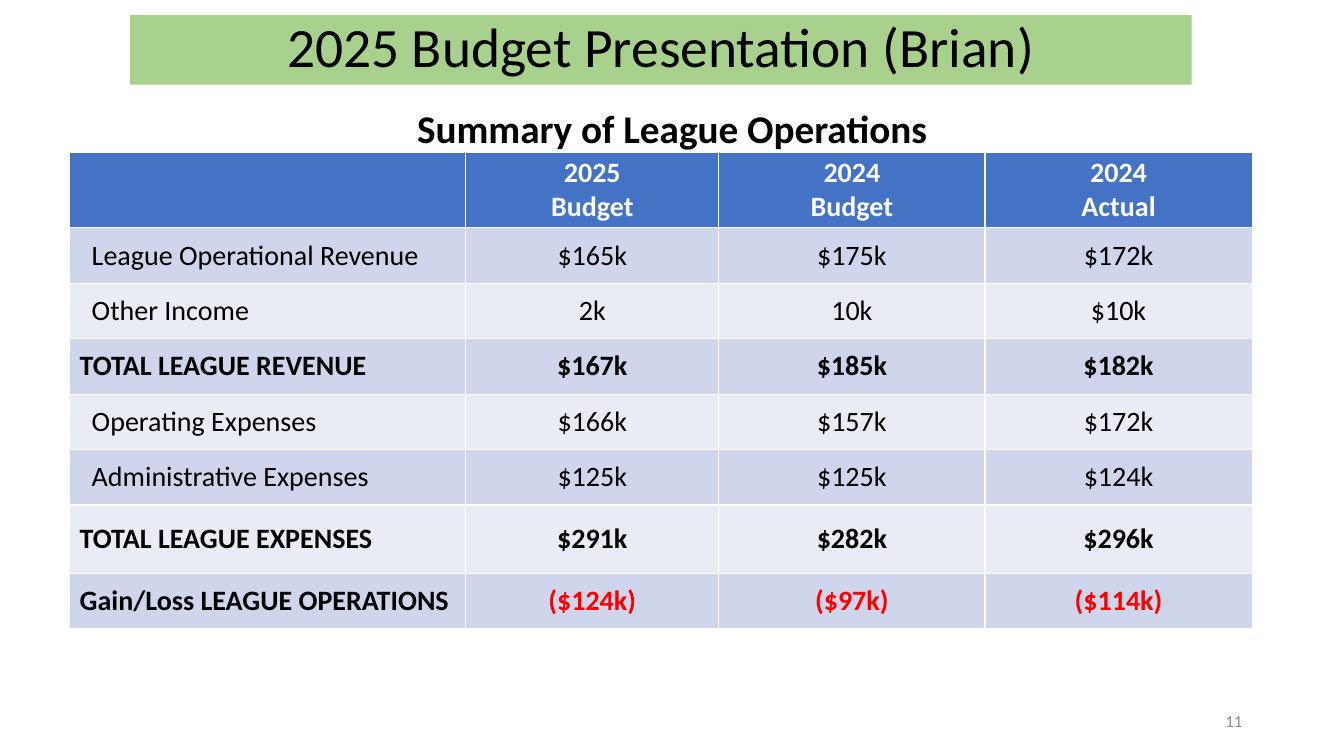
from pptx import Presentation
from pptx.dml.color import RGBColor
from pptx.enum.shapes import MSO_SHAPE
from pptx.enum.text import MSO_ANCHOR, PP_ALIGN
from pptx.util import Inches, Pt

RECT = MSO_SHAPE.RECTANGLE
TOP, MIDDLE = MSO_ANCHOR.TOP, MSO_ANCHOR.MIDDLE
LEFT, CENTER, RIGHT = PP_ALIGN.LEFT, PP_ALIGN.CENTER, PP_ALIGN.RIGHT

FONT = "Calibri"
BLACK = RGBColor(0x00, 0x00, 0x00)
WHITE = RGBColor(0xFF, 0xFF, 0xFF)
GRAY = RGBColor(0x8C, 0x8C, 0x8C)
RED = RGBColor(0xFF, 0x00, 0x00)
GREEN = RGBColor(0xA9, 0xD1, 0x8E)
BLUE = RGBColor(0x44, 0x72, 0xC4)
BANDS = (RGBColor(0xE9, 0xEB, 0xF5), RGBColor(0xCF, 0xD5, 0xEA))

WIDTHS = (3.93, 2.51, 2.64, 2.65)
HEIGHTS = (0.75, 0.55, 0.55, 0.55, 0.55, 0.55, 0.68, 0.55)
BUDGET = (
    ("", "2025\vBudget", "2024\vBudget", "2024\vActual"),
    ("League Operational Revenue", "$165k", "$175k", "$172k"),
    ("Other Income", "2k", "10k", "$10k"),
    ("TOTAL LEAGUE REVENUE", "$167k", "$185k", "$182k"),
    ("Operating Expenses", "$166k", "$157k", "$172k"),
    ("Administrative Expenses", "$125k", "$125k", "$124k"),
    ("TOTAL LEAGUE EXPENSES", "$291k", "$282k", "$296k"),
    ("Gain/Loss LEAGUE OPERATIONS", "($124k)", "($97k)", "($114k)"),
)
BOLD_ROWS = (0, 3, 6, 7)


def set_text(frame, text, size, color, align, bold=False):
    frame.text = text
    line = frame.paragraphs[0]
    line.alignment = align
    for run in line.runs:
        run.font.name = FONT
        run.font.size = Pt(size)
        run.font.bold = bold
        run.font.color.rgb = color


def add_title(slide, text):
    bar = slide.shapes.add_shape(
        RECT, Inches(1.29), Inches(0.15), Inches(10.53), Inches(0.69))
    bar.shadow.inherit = False
    bar.fill.solid()
    bar.fill.fore_color.rgb = GREEN
    bar.line.fill.background()
    frame = bar.text_frame
    frame.vertical_anchor = MIDDLE
    set_text(frame, text, 39.6, BLACK, CENTER)
    frame.paragraphs[0].line_spacing = 0.9


def add_label(slide, box, text, size, color, align, anchor, bold=False):
    label = slide.shapes.add_textbox(*map(Inches, box))
    frame = label.text_frame
    frame.word_wrap = True
    frame.vertical_anchor = anchor
    set_text(frame, text, size, color, align, bold)


def fill_cell(cell, text, row, col):
    cell.fill.solid()
    cell.fill.fore_color.rgb = BANDS[row % 2] if row else BLUE
    cell.vertical_anchor = MIDDLE
    cell.margin_top = cell.margin_bottom = Inches(0.03)
    bold = row in BOLD_ROWS
    if col == 0 and not bold:
        cell.margin_left = Inches(0.22)
    color = BLACK if row else WHITE
    if col and text.startswith("("):
        color = RED
    set_text(cell.text_frame, text, 20, color, CENTER if col else LEFT, bold)


def add_budget(slide):
    table = slide.shapes.add_table(
        len(HEIGHTS), len(WIDTHS), Inches(0.69), Inches(1.51),
        Inches(sum(WIDTHS)), Inches(sum(HEIGHTS))).table
    for col, width in enumerate(WIDTHS):
        table.columns[col].width = Inches(width)
    for row, height in enumerate(HEIGHTS):
        table.rows[row].height = Inches(height)
        for col, text in enumerate(BUDGET[row]):
            fill_cell(table.cell(row, col), text, row, col)


def main():
    deck = Presentation()
    deck.slide_width = Inches(13.33)
    deck.slide_height = Inches(7.5)
    slide = deck.slides.add_slide(deck.slide_layouts[6])
    add_title(slide, "2025 Budget Presentation (Brian)")
    add_label(slide, (0.92, 0.99, 11.49, 0.57), "Summary of League Operations",
              28, BLACK, CENTER, TOP, True)
    add_label(slide, (9.42, 6.95, 3, 0.4), "11", 12, GRAY, RIGHT, MIDDLE)
    add_budget(slide)
    deck.save("out.pptx")


if __name__ == "__main__":
    main()
